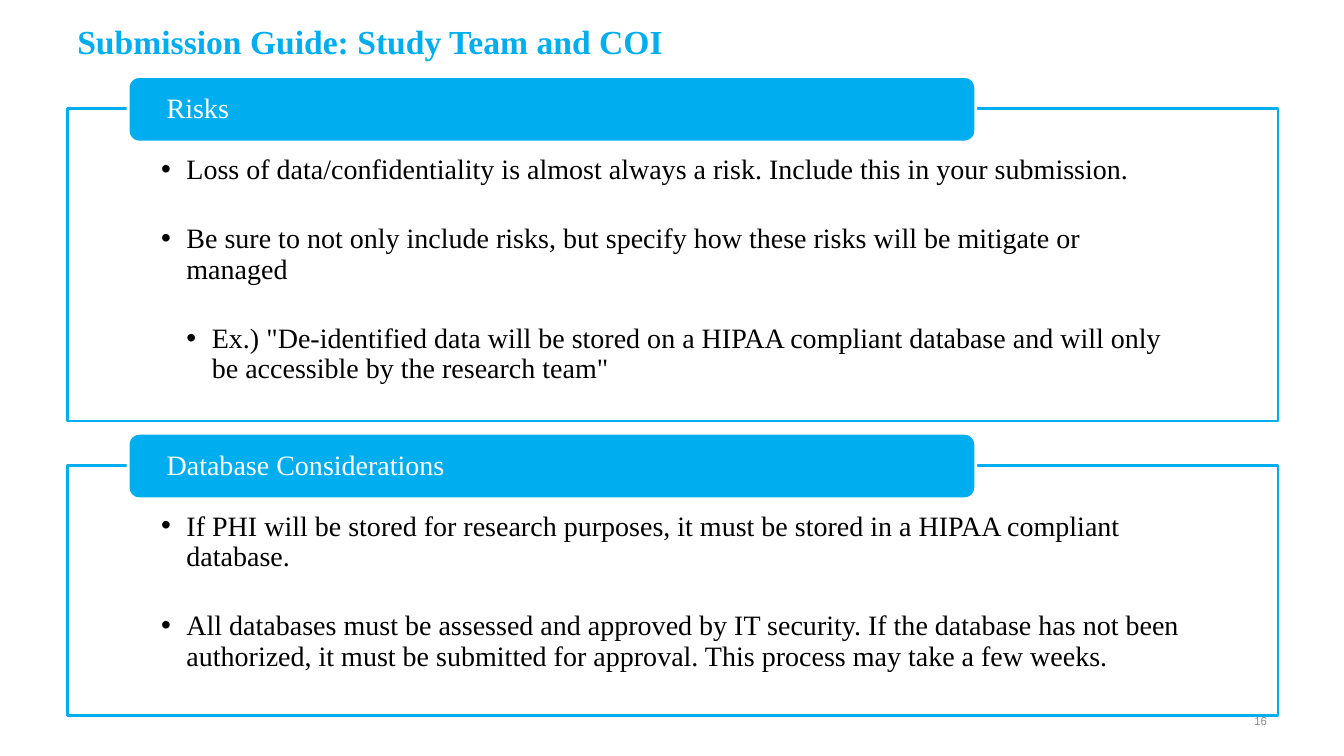
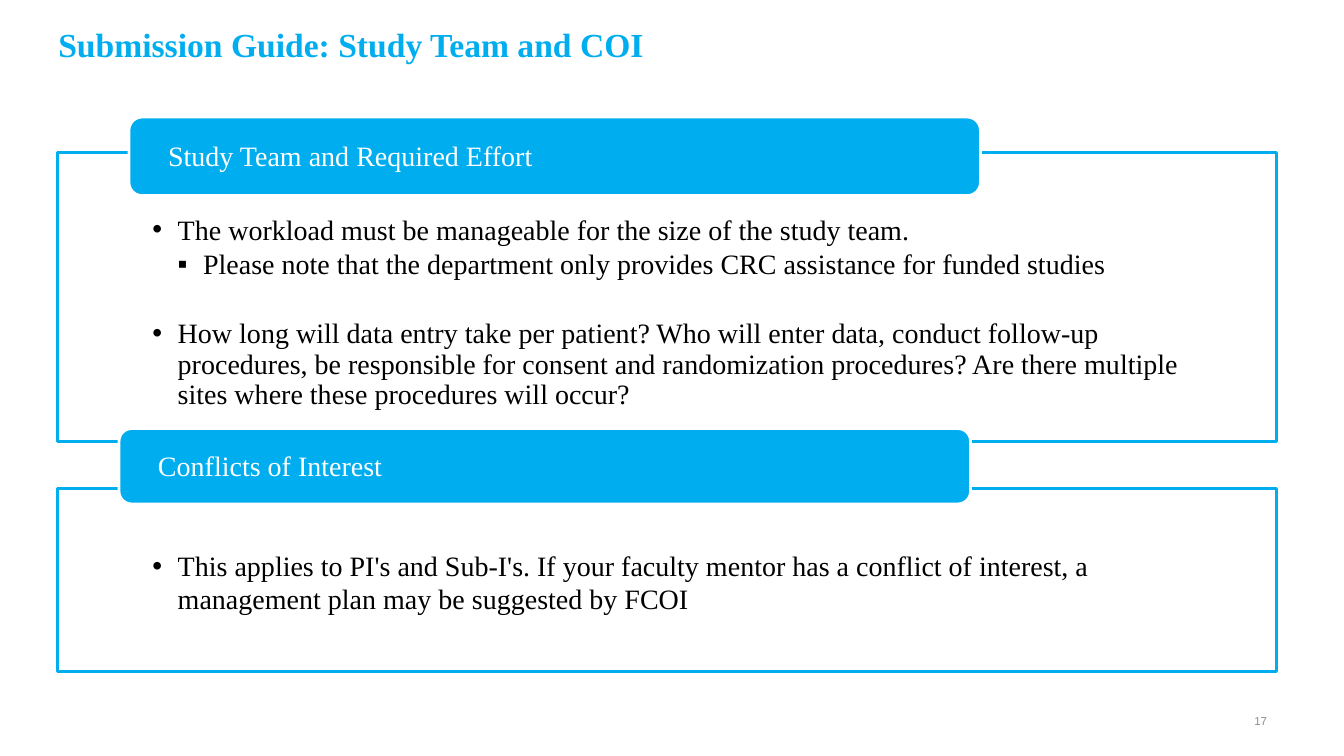
"""Build two submission guide slides with tabbed, framed bullet panels."""
from dataclasses import dataclass

from lxml import etree
from pptx import Presentation
from pptx import util as u
from pptx.dml.color import RGBColor
from pptx.enum import shapes, text
from pptx.oxml.ns import qn


@dataclass(frozen=True)
class Theme:
    """Colours, fonts and type sizes shared by the slides."""
    accent: str = "00AEEF"
    paper: str = "FFFFFF"
    ink: str = "000000"
    muted: str = "8C8C8C"
    serif: str = "Times New Roman"
    sans: str = "Arial"
    title_size: float = 24
    body_size: float = 20
    number_size: float = 8.2
    line_width: float = 2
    frame_opacity: int = 90
    indent: float = 0.64
    tight_gap: float = 3
    wide_gap: float = 28


THEME = Theme()
TITLE = "Submission Guide: Study Team and COI"


def write_text(paragraph, words, *, size=THEME.body_size, color=THEME.ink,
               font=THEME.serif, bold=False, align=text.PP_ALIGN.LEFT,
               spacing=None, before=0, bullet=None, level=1):
    """Write one formatted paragraph."""
    if bullet:
        properties = paragraph._p.get_or_add_pPr()
        properties.set("marL", str(u.Cm(THEME.indent * level)))
        properties.set("indent", str(-u.Cm(THEME.indent)))
        etree.SubElement(properties, qn("a:buFont"), typeface=THEME.sans)
        etree.SubElement(properties, qn("a:buChar"), char=bullet)
    paragraph.alignment = align
    paragraph.space_before = u.Pt(before)
    if spacing:
        paragraph.line_spacing = spacing
    run = paragraph.add_run()
    run.text = words
    run.font.name = font
    run.font.size = u.Pt(size)
    run.font.bold = bold
    run.font.color.rgb = RGBColor.from_string(color)


def set_frame(frame, anchor, margins=None):
    """Set wrapping, anchor and optional margins of a text frame."""
    frame.word_wrap = True
    frame.vertical_anchor = anchor
    if margins:
        (frame.margin_left, frame.margin_top,
         frame.margin_right, frame.margin_bottom) = map(u.Cm, margins)


def add_label(slide, box, words, anchor=text.MSO_ANCHOR.TOP, **style):
    """Add a text box with one paragraph."""
    frame = slide.shapes.add_textbox(*map(u.Cm, box)).text_frame
    set_frame(frame, anchor)
    write_text(frame.paragraphs[0], words, **style)


def add_block(slide, preset, box, fill, line):
    """Add a filled and outlined preset shape without shadow."""
    block = slide.shapes.add_shape(preset, *map(u.Cm, box))
    block.shadow.inherit = False
    block.fill.solid()
    block.fill.fore_color.rgb = RGBColor.from_string(fill)
    block.line.color.rgb = RGBColor.from_string(line)
    block.line.width = u.Pt(THEME.line_width)
    return block


def add_frame(slide, box, bullets, side, top):
    """Add an outlined panel holding (text, options) bullets."""
    panel = add_block(slide, shapes.MSO_SHAPE.RECTANGLE, box,
                      THEME.paper, THEME.accent)
    fill_color = panel._element.spPr.find(qn("a:solidFill"))[0]
    etree.SubElement(fill_color, qn("a:alpha"),
                     val=str(THEME.frame_opacity * 1000))
    frame = panel.text_frame
    set_frame(frame, text.MSO_ANCHOR.TOP, (side, top, side, 0.41))
    for index, (words, options) in enumerate(bullets):
        paragraph = frame.add_paragraph() if index else frame.paragraphs[0]
        style = {"bullet": "•", "spacing": 0.9,
                 "before": THEME.wide_gap if index else 0, **options}
        write_text(paragraph, words, **style)


def add_tab(slide, box, heading, spacing):
    """Add the rounded heading tab of a panel."""
    tab = add_block(slide, shapes.MSO_SHAPE.ROUNDED_RECTANGLE, box,
                    THEME.accent, THEME.paper)
    set_frame(tab.text_frame, text.MSO_ANCHOR.MIDDLE, (0.89, 0, 0.89, 0))
    write_text(tab.text_frame.paragraphs[0], heading, color=THEME.paper,
               spacing=spacing)


def start_slide(deck, number, left, top):
    """Add a blank slide with its title and page number."""
    slide = deck.slides.add_slide(deck.slide_layouts[6])
    add_label(slide, (left, top, 30.48, 1.73), TITLE, size=THEME.title_size,
              color=THEME.accent, bold=True)
    add_label(slide, (24.28, 17.65, 7.9, 1.02), str(number),
              anchor=text.MSO_ANCHOR.MIDDLE, size=THEME.number_size,
              color=THEME.muted, font=THEME.sans, align=text.PP_ALIGN.RIGHT)
    return slide


def add_risks_slide(deck):
    """Add the slide on risks and databases."""
    slide = start_slide(deck, 16, 1.7, 0.41)
    panels = [
        ("Risks", 2.74, 7.87, [
            ("Loss of data/confidentiality is almost always a risk. "
             "Include this in your submission.", {}),
            ("Be sure to not only include risks, but specify how these "
             "risks will be mitigate or managed", {}),
            ('Ex.) "De-identified data will be stored on a HIPAA compliant '
             'database and will only be accessible by the research team"',
             {"level": 2}),
        ]),
        ("Database Considerations", 11.73, 6.3, [
            ("If PHI will be stored for research purposes, it must be "
             "stored in a HIPAA compliant database.", {}),
            ("All databases must be assessed and approved by IT security. "
             "If the database has not been authorized, it must be submitted "
             "for approval. This process may take a few weeks.", {}),
        ]),
    ]
    for heading, top, height, bullets in panels:
        add_frame(slide, (1.7, top, 30.51, height), bullets, 2.36, 1.17)
        add_tab(slide, (3.23, top - 0.81, 21.36, 1.65), heading, 0.9)


def add_team_slide(deck):
    """Add the slide on study team and conflicts of interest."""
    slide = start_slide(deck, 17, 1.22, 0.48)
    fixed = u.Pt(23)
    panels = [
        ("Study Team and Required Effort", 3.84, 7.29, (3.25, 2.95, 21.46, 1.98), [
            ("The workload must be manageable for the size of the study "
             "team.", {"spacing": fixed}),
            ("Please note that the department only provides CRC assistance "
             "for funded studies",
             {"level": 2, "bullet": "▪", "before": THEME.tight_gap}),
            ("How long will data entry take per patient? Who will enter "
             "data, conduct follow-up procedures, be responsible for consent "
             "and randomization procedures? Are there multiple sites where "
             "these procedures will occur?", {}),
        ]),
        ("Conflicts of Interest", 12.32, 4.6, (3, 10.8, 21.46, 1.9), [
            ("This applies to PI's and Sub-I's. If your faculty mentor has a "
             "conflict of interest, a management plan may be suggested by "
             "FCOI", {"spacing": fixed}),
        ]),
    ]
    for heading, top, height, tab_box, bullets in panels:
        add_frame(slide, (1.45, top, 30.73, height), bullets, 2.39, 1.55)
        add_tab(slide, tab_box, heading, fixed)


def main():
    """Build and save the deck."""
    deck = Presentation()
    deck.slide_width = u.Cm(33.87)
    deck.slide_height = u.Cm(19.05)
    add_risks_slide(deck)
    add_team_slide(deck)
    deck.save("out.pptx")


if __name__ == "__main__":
    main()
